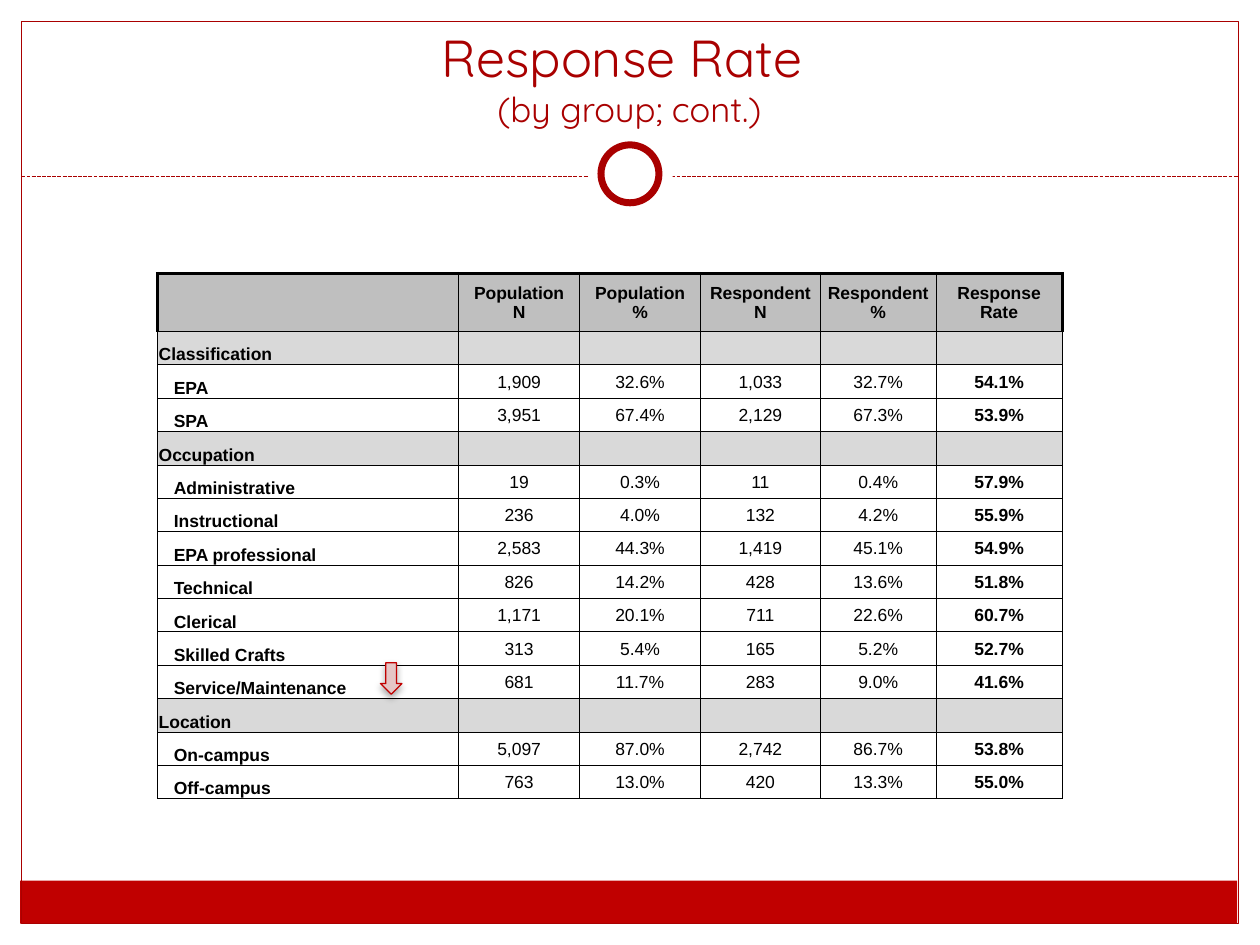
from lxml import etree
from pptx import Presentation
from pptx.dml.color import RGBColor
from pptx.enum.dml import MSO_LINE as Dash
from pptx.enum.shapes import MSO_CONNECTOR as Link, MSO_SHAPE as Kind
from pptx.enum.text import MSO_ANCHOR as Anchor, PP_ALIGN as Align
from pptx.oxml import parse_xml
from pptx.oxml.ns import nsdecls, qn
from pptx.util import Inches, Pt

RED, DEEP, BLACK, WHITE = "A90000", "C00000", "000000", "FFFFFF"


def color(code):
    return RGBColor.from_string(code)


def draw(kind, box, fill=None, line=None, width=0.75):
    """Add a preset shape; box is left, top, width, height in inches."""
    shape = slide.shapes.add_shape(kind, *map(Inches, box))
    shape.shadow.inherit = False
    if fill:
        shape.fill.solid()
        shape.fill.fore_color.rgb = color(fill)
    else:
        shape.fill.background()
    if line:
        shape.line.color.rgb = color(line)
        shape.line.width = Pt(width)
    else:
        shape.line.fill.background()
    return shape


prs = Presentation()
prs.slide_width, prs.slide_height = Inches(10), Inches(7.5)
slide = prs.slides.add_slide(prs.slide_layouts[6])

# Frame, divider and ring
draw(Kind.RECTANGLE, (0.16, 6.99, 9.66, 0.34), DEEP)
draw(Kind.RECTANGLE, (0.17, 0.17, 9.66, 7.16), line=RED)
rule = slide.shapes.add_connector(
    Link.STRAIGHT, Inches(0.17), Inches(1.4), Inches(9.83), Inches(1.4))
rule.line.color.rgb = color(RED)
rule.line.width = Pt(0.75)
rule.line.dash_style = Dash.SQUARE_DOT
etree.SubElement(rule._element.spPr, qn("a:effectLst"))
draw(Kind.OVAL, (4.67, 1.05, 0.67, 0.67), WHITE)
draw(Kind.OVAL, (4.77, 1.15, 0.46, 0.46), WHITE, RED, 4)

# Title
title = slide.shapes.add_textbox(
    Inches(0.33), Inches(0.25), Inches(9.33), Inches(0.83)).text_frame
title.word_wrap = True
title.vertical_anchor = Anchor.BOTTOM
para = title.paragraphs[0]
para.alignment = Align.CENTER
para.font.name = "Quicksand"
para.font.color.rgb = color(RED)
for text, size in (("Response Rate ", 29.7), ("(by group; cont.)", 19.8)):
    if para.runs:
        para.add_line_break()
    run = para.add_run()
    run.text = text
    run.font.size = Pt(size)

# Table: one-item rows are section headings
rows = [
    ("", "Population\vN", "Population\v%", "Respondent\vN", "Respondent\v%",
     "Response\vRate"),
    ("Classification",),
    ("EPA", "1,909", "32.6%", "1,033", "32.7%", "54.1%"),
    ("SPA", "3,951", "67.4%", "2,129", "67.3%", "53.9%"),
    ("Occupation",),
    ("Administrative", "19", "0.3%", "11", "0.4%", "57.9%"),
    ("Instructional", "236", "4.0%", "132", "4.2%", "55.9%"),
    ("EPA professional", "2,583", "44.3%", "1,419", "45.1%", "54.9%"),
    ("Technical", "826", "14.2%", "428", "13.6%", "51.8%"),
    ("Clerical", "1,171", "20.1%", "711", "22.6%", "60.7%"),
    ("Skilled Crafts", "313", "5.4%", "165", "5.2%", "52.7%"),
    ("Service/Maintenance", "681", "11.7%", "283", "9.0%", "41.6%"),
    ("Location",),
    ("On-campus", "5,097", "87.0%", "2,742", "86.7%", "53.8%"),
    ("Off-campus", "763", "13.0%", "420", "13.3%", "55.0%"),
]
widths = (2.39, 0.96, 0.96, 0.95, 0.92, 1)
last = len(widths) - 1
table = slide.shapes.add_table(
    len(rows), len(widths), Inches(1.25), Inches(2.17),
    Inches(7.17), Inches(4.17)).table
for col, width in zip(table.columns, widths):
    col.width = Inches(width)

for r, row in enumerate(rows):
    head, group = r == 0, len(row) == 1
    table.rows[r].height = Inches(0.46 if head else (4.17 - 0.46) / 14)
    for c in range(len(widths)):
        cell = table.cell(r, c)
        label = c == 0
        cell.text = row[c] if c < len(row) else ""
        cell.margin_left = Inches(0.13 if label and not group else 0.01)
        cell.margin_right = cell.margin_top = Inches(0.01)
        cell.margin_bottom = 0
        cell.vertical_anchor = Anchor.BOTTOM if label else Anchor.MIDDLE
        cell.fill.solid()
        cell.fill.fore_color.rgb = color(
            "BFBFBF" if head else "D9D9D9" if group else WHITE)
        para = cell.text_frame.paragraphs[0]
        para.alignment = Align.LEFT if label else Align.CENTER
        para.font.name = "Arial"
        para.font.size = Pt(10)
        para.font.bold = head or c in (0, last)
        para.font.color.rgb = color(BLACK)
        if not cell.text:  # keeps empty rows from growing
            para._p.get_or_add_endParaRPr().set("sz", "1000")
        thick = {"L": head and label, "R": head and c == last,
                 "T": head, "B": False}
        for i, (side, bold) in enumerate(thick.items()):
            edge = parse_xml(
                f'<a:ln{side} {nsdecls("a")} w="{Pt(2 if bold else 0.5)}">'
                f'<a:solidFill><a:srgbClr val="{BLACK}"/></a:solidFill>'
                f'</a:ln{side}>')
            cell._tc.get_or_add_tcPr().insert(i, edge)

# Arrow marking the lowest rate
arrow = draw(Kind.DOWN_ARROW, (3.02, 5.26, 0.17, 0.25), "E5C5C5", DEEP)
arrow._element.spPr.find(qn("a:effectLst")).append(parse_xml(
    f'<a:outerShdw {nsdecls("a")} blurRad="{Pt(4)}" dist="{Pt(2)}" '
    f'dir="5400000" rotWithShape="0"><a:srgbClr val="{BLACK}">'
    '<a:alpha val="35000"/></a:srgbClr></a:outerShdw>'))

prs.save("out.pptx")
